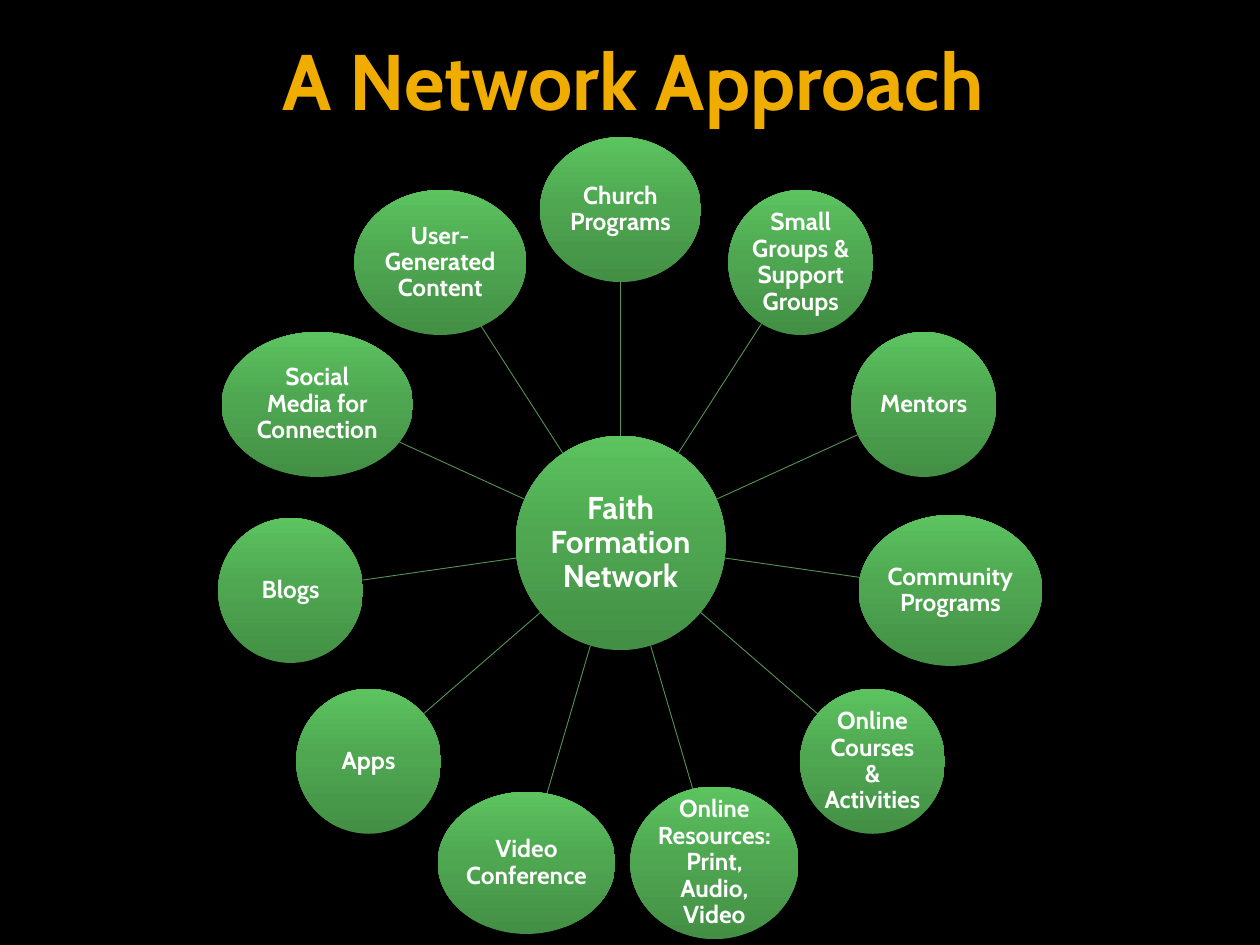
"""Build a slide showing a faith formation network as a hub with eleven nodes."""
from copy import deepcopy
from math import cos, hypot, pi, sin

from pptx import Presentation
from pptx.dml.color import RGBColor
from pptx.enum.shapes import MSO_CONNECTOR, MSO_SHAPE
from pptx.enum.text import MSO_ANCHOR, PP_ALIGN
from pptx.oxml.ns import qn
from pptx.oxml.xmlchemy import OxmlElement
from pptx.util import Pt

OVAL = MSO_SHAPE.OVAL
LINE = MSO_CONNECTOR.STRAIGHT
MIDDLE = MSO_ANCHOR.MIDDLE
CENTER = PP_ALIGN.CENTER

COLORS = {"back": "000000", "title": "F0AD00", "text": "FFFFFF", "spoke": "569357"}
SHADES = [(0, "438F45"), (0.55, "4FA851"), (1, "5CC35F")]
HUB_X, HUB_Y, HUB_W, HUB_H = 354.6, 310.3, 120, 122.4
RADIUS = 190.5
NODES = [
    ("Church Programs", 92, 82.8),
    ("Small Groups & Support Groups", 82.8, 82.8),
    ("Mentors", 82.8, 82.8),
    ("Community Programs", 105, 86.2),
    ("Online Courses & Activities", 82.8, 82.8),
    ("Online Resources: Print, Audio, Video", 96.2, 87.2),
    ("Video Conference", 101.6, 81.2),
    ("Apps", 82.8, 82.8),
    ("Blogs", 82.8, 82.8),
    ("Social Media for Connection", 109.4, 82.8),
    ("User-Generated Content", 98.2, 82.8),
]


def write(frame, text, size, color):
    frame.word_wrap = True
    frame.vertical_anchor = MIDDLE
    frame.text = text
    para = frame.paragraphs[0]
    para.alignment = CENTER
    font = para.runs[0].font
    font.name, font.size, font.bold = "Cabin", Pt(size), True
    font.color.rgb = RGBColor.from_string(COLORS[color])


def add_oval(x, y, wide, high, text, size):
    oval = slide.shapes.add_shape(
        OVAL, Pt(x - wide / 2), Pt(y - high / 2), Pt(wide), Pt(high))
    oval.shadow.inherit = False
    oval.line.fill.background()
    oval.fill.gradient()
    oval.fill.gradient_angle = 90
    first = oval.fill._fill._gradFill.gsLst[0]
    first.addnext(deepcopy(first))
    for stop, (place, shade) in zip(oval.fill.gradient_stops, SHADES):
        stop.position = place
        stop.color.rgb = RGBColor.from_string(shade)
    frame = oval.text_frame
    frame.margin_left = frame.margin_right = Pt(0.7)
    frame.margin_top = frame.margin_bottom = Pt(0.7)
    write(frame, text, size, "text")
    frame.paragraphs[0].line_spacing = 0.9


deck = Presentation()
deck.slide_width, deck.slide_height = Pt(720), Pt(540)
slide = deck.slides.add_slide(deck.slide_layouts[6])
slide.background.fill.solid()
slide.background.fill.fore_color.rgb = RGBColor.from_string(COLORS["back"])

title = slide.shapes.add_textbox(Pt(36), Pt(12.2), Pt(648), Pt(65.5))
title.text_frame.margin_right = Pt(3.6)
write(title.text_frame, "A Network Approach", 45, "title")

add_oval(HUB_X, HUB_Y, HUB_W, HUB_H, "Faith Formation Network", 18)

for i, (name, wide, high) in enumerate(NODES):
    angle = 2 * pi * i / len(NODES)
    dx, dy = sin(angle), -cos(angle)
    start = 1 / hypot(2 * dx / HUB_W, 2 * dy / HUB_H)
    end = RADIUS - 1 / hypot(2 * dx / wide, 2 * dy / high)
    spoke = slide.shapes.add_connector(
        LINE, Pt(HUB_X + start * dx), Pt(HUB_Y + start * dy),
        Pt(HUB_X + end * dx), Pt(HUB_Y + end * dy))
    spoke.line.width = Pt(0.5)
    spoke.line.color.rgb = RGBColor.from_string(COLORS["spoke"])
    spoke._element.find(qn("p:spPr")).append(OxmlElement("a:effectLst"))
    add_oval(HUB_X + RADIUS * dx, HUB_Y + RADIUS * dy, wide, high, name, 14)

deck.save("out.pptx")
